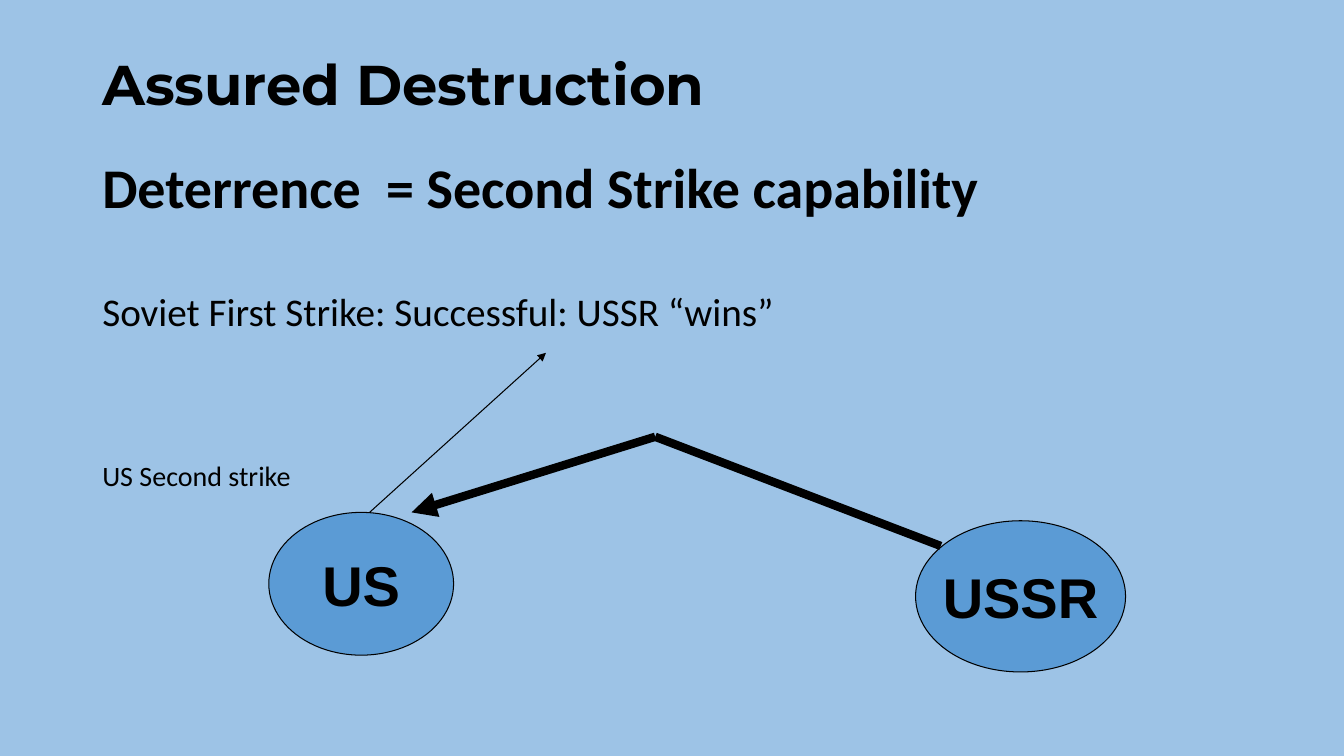
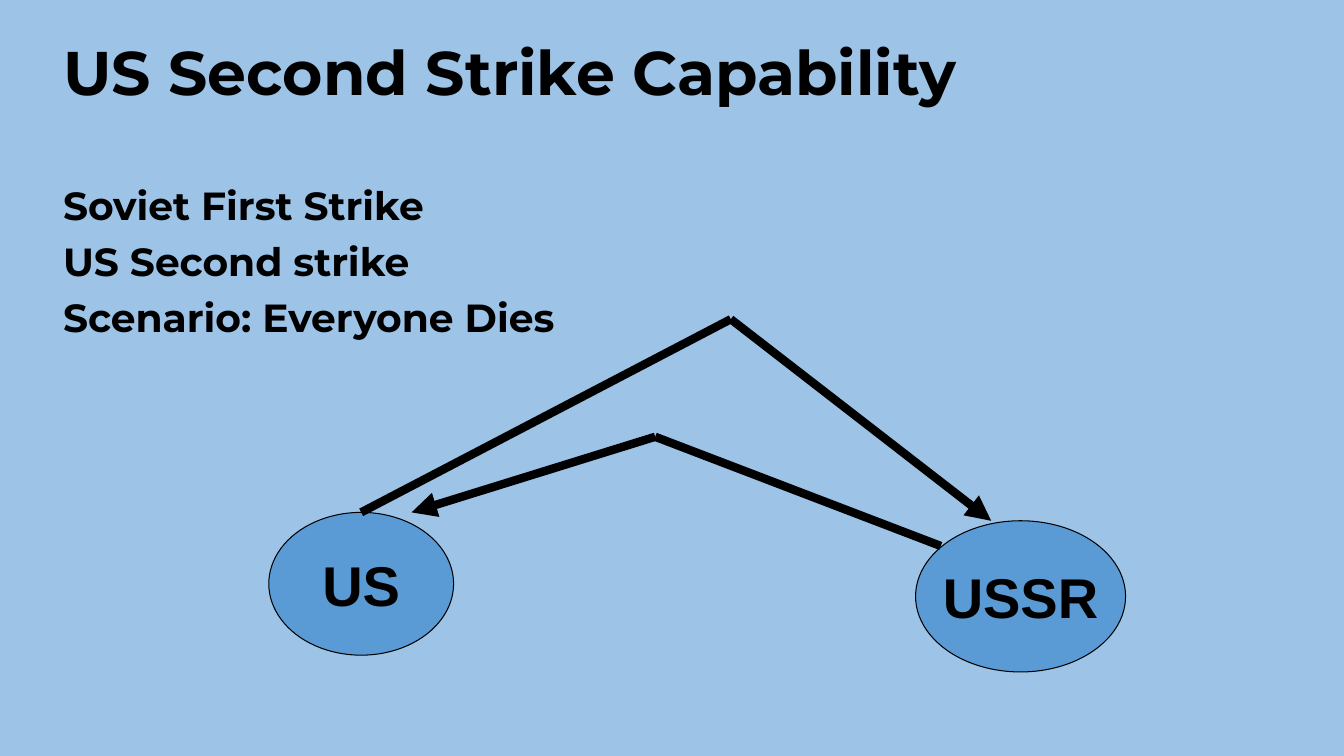
"""Build two slides on nuclear deterrence and second strike capability."""
from itertools import pairwise

from lxml import etree
from pptx import Presentation
from pptx.dml.color import RGBColor
from pptx.enum.shapes import MSO_CONNECTOR, MSO_SHAPE
from pptx.enum.text import MSO_ANCHOR, MSO_AUTO_SIZE, PP_ALIGN
from pptx.oxml.ns import qn
from pptx.util import Pt

STRAIGHT, ELLIPSE = MSO_CONNECTOR.STRAIGHT, MSO_SHAPE.OVAL
TOP, MIDDLE = MSO_ANCHOR.TOP, MSO_ANCHOR.MIDDLE
LEFT, CENTER = PP_ALIGN.LEFT, PP_ALIGN.CENTER
NO_FIT = MSO_AUTO_SIZE.NONE

TITLE_ONLY = 5
SKY, BLUE, BLACK = "9DC3E6", "5B9BD5", "000000"
HEADING, BODY, LABEL = "Montserrat", "Calibri", "Arial"


def color(value):
    """Return the colour for a hex string."""
    return RGBColor.from_string(value)


def write(para, text, size=28, font=HEADING, bold=True, align=LEFT, spacing=0.9, before=0):
    """Put formatted text into a paragraph."""
    para.alignment, para.line_spacing, para.space_before = align, spacing, Pt(before)
    span = para.add_run()
    span.text = text
    span.font.name, span.font.size, span.font.bold = font, Pt(size), bold
    span.font.color.rgb = color(BLACK)


class Slides:
    """Hold the deck, its style and the current slide."""

    def __init__(self):
        """Start a widescreen deck with a plain background."""
        self.deck = Presentation()
        self.deck.slide_width, self.deck.slide_height = Pt(960), Pt(540)
        fill = self.deck.slide_master.background.fill
        fill.solid()
        fill.fore_color.rgb = color(SKY)
        self.page = None

    def add_page(self, title, left, top, width, height, size):
        """Open a slide and format its title."""
        self.page = self.deck.slides.add_slide(self.deck.slide_layouts[TITLE_ONLY])
        box = self.page.shapes.title
        box.left, box.top, box.width, box.height = map(Pt, (left, top, width, height))
        frame = box.text_frame
        frame.auto_size, frame.vertical_anchor, frame.word_wrap = NO_FIT, MIDDLE, True
        write(frame.paragraphs[0], title, size=size)

    def add_text(self, left, top, width, height, lines):
        """Add a text box from pairs of text and format."""
        box = self.page.shapes.add_textbox(*map(Pt, (left, top, width, height)))
        frame = box.text_frame
        frame.word_wrap, frame.vertical_anchor = True, TOP
        for index, (text, style) in enumerate(lines):
            para = frame.add_paragraph() if index else frame.paragraphs[0]
            write(para, text, **style)

    def add_country(self, name, left, top, width, height):
        """Add a labelled ellipse for a country."""
        shape = self.page.shapes.add_shape(ELLIPSE, *map(Pt, (left, top, width, height)))
        shape.shadow.inherit = False
        shape.fill.solid()
        shape.fill.fore_color.rgb = color(BLUE)
        shape.line.color.rgb, shape.line.width = color(BLACK), Pt(0.75)
        frame = shape.text_frame
        frame.word_wrap, frame.vertical_anchor = False, MIDDLE
        write(frame.paragraphs[0], name, size=40, font=LABEL, align=CENTER, spacing=1)

    def add_strike(self, *points, width=6):
        """Join points with lines that end in an arrowhead."""
        for start, end in pairwise(points):
            line = self.page.shapes.add_connector(STRAIGHT, *map(Pt, start + end))
            line.line.color.rgb, line.line.width = color(BLACK), Pt(width)
            properties = line.element.spPr
            etree.SubElement(properties, qn("a:effectLst"))
            if end == points[-1]:
                outline = properties.find(qn("a:ln"))
                etree.SubElement(outline, qn("a:tailEnd"), type="triangle")

    def add_first_strike(self):
        """Add both countries and the Soviet attack."""
        self.add_country("US", 192, 366, 132, 102)
        self.add_country("USSR", 654, 372, 150, 108)
        self.add_strike((672, 390), (468, 312), (294, 366))


def main():
    """Build and save the deck."""
    slides = Slides()

    slides.add_page("Assured Destruction", 66, 29, 828, 67, size=40)
    slides.add_text(66, 111, 828, 375, [
        ("Deterrence  = Second Strike capability", {"size": 40, "font": BODY}),
        ("Soviet First Strike: Successful: USSR “wins”",
         {"font": BODY, "bold": False, "before": 51}),
        ("US Second strike", {"size": 20, "font": BODY, "bold": False, "before": 91.5}),
    ])
    slides.add_first_strike()
    slides.add_strike((264, 366), (390, 252), width=0.75)

    slides.add_page("US Second Strike Capability", 38, 24, 766, 60, size=44)
    slides.add_text(38, 129.5, 883, 351, [
        ("Soviet First Strike", {}),
        ("US Second strike", {"before": 10}),
        ("Scenario: Everyone Dies", {"before": 10}),
    ])
    slides.add_first_strike()
    slides.add_strike((258, 366), (522, 228), (708, 372))

    slides.deck.save("out.pptx")


if __name__ == "__main__":
    main()
